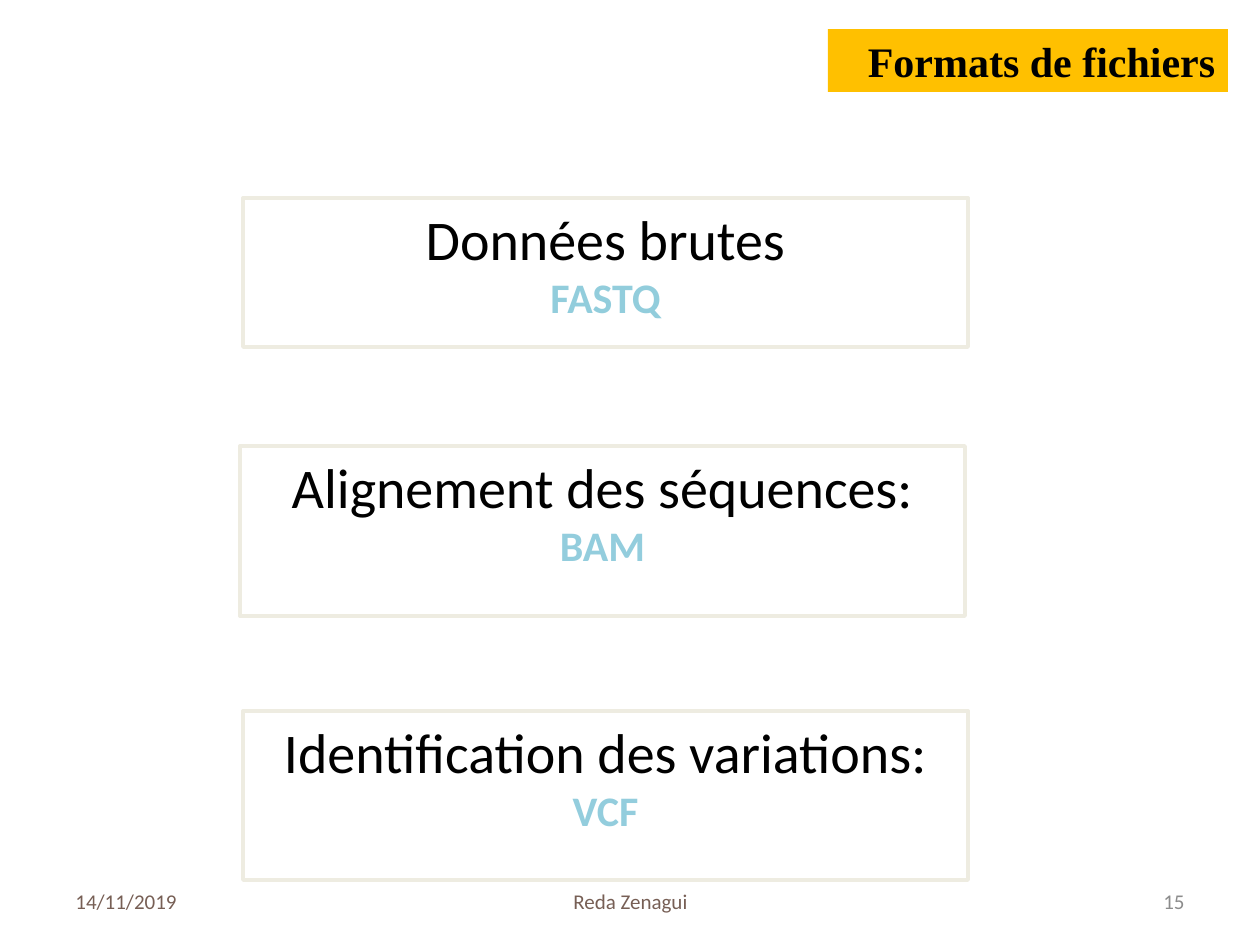
import pptx
import pptx.util
import pptx.dml.color
import pptx.enum.shapes
import pptx.enum.text

PX = 914400 / 126
BLACK = pptx.dml.color.RGBColor(0x00, 0x00, 0x00)
AMBER = pptx.dml.color.RGBColor(0xFF, 0xC0, 0x00)
IVORY = pptx.dml.color.RGBColor(0xEE, 0xEC, 0xE1)
SKY = pptx.dml.color.RGBColor(0x93, 0xCD, 0xDD)
SKY_FIRST = pptx.dml.color.RGBColor(0x92, 0xCD, 0xDC)
BROWN = pptx.dml.color.RGBColor(0x77, 0x5F, 0x55)
GREY = pptx.dml.color.RGBColor(0x8C, 0x8C, 0x8C)
ALIGN = pptx.enum.text.PP_ALIGN
ANCHOR = pptx.enum.text.MSO_ANCHOR


def emu(*lengths):
    return [pptx.util.Emu(round(length * PX)) for length in lengths]


def style(font, size, color, bold=False, name="Calibri"):
    font.name = name
    font.size = pptx.util.Pt(size)
    font.bold = bold
    font.color.rgb = color


def place_heading(slide, box, text):
    heading = slide.shapes.title
    heading.left, heading.top, heading.width, heading.height = emu(*box)
    heading.fill.solid()
    heading.fill.fore_color.rgb = AMBER
    frame = heading.text_frame
    frame.text = text
    frame.word_wrap = True
    frame.auto_size = pptx.enum.text.MSO_AUTO_SIZE.NONE
    frame.vertical_anchor = ANCHOR.TOP
    line = frame.paragraphs[0]
    line.alignment = ALIGN.RIGHT
    style(line.font, 24, BLACK, True, "Times New Roman")


def place_step(slide, box, label, file_format, format_color, separate):
    step = slide.shapes.add_shape(
        pptx.enum.shapes.MSO_SHAPE.RECTANGLE, *emu(*box))
    step.shadow.inherit = False
    step.fill.background()
    step.line.color.rgb = IVORY
    step.line.width = pptx.util.Pt(2.25)
    frame = step.text_frame
    frame.word_wrap = True
    frame.vertical_anchor = ANCHOR.TOP
    label_line = frame.paragraphs[0]
    format_line = frame.add_paragraph() if separate else label_line
    for line, text, size, color, bold in (
            (label_line, label, 32, BLACK, False),
            (format_line, file_format, 24, format_color, True)):
        line.alignment = ALIGN.CENTER
        run = line.add_run()
        run.text = text
        style(run.font, size, color, bold)


def place_footer(slide, box, entries):
    left, top, width, height = box
    for offset, entry_width, text, alignment, color in entries:
        entry = slide.shapes.add_textbox(
            *emu(left + offset, top, entry_width, height))
        frame = entry.text_frame
        frame.word_wrap = True
        frame.vertical_anchor = ANCHOR.MIDDLE
        line = frame.paragraphs[0]
        line.text = text
        line.alignment = alignment
        style(line.font, 12, color)


def main():
    deck = pptx.Presentation()
    deck.slide_width, deck.slide_height = emu(1260, 945)
    slide = deck.slides.add_slide(deck.slide_layouts[5])
    place_heading(slide, (828, 29, 400, 63), "Formats de fichiers")
    steps = (
        ((243, 198, 725, 149), "Données brutes", "FASTQ", SKY_FIRST, True),
        ((240, 446, 725, 170), "Alignement des séquences: ", "BAM", SKY, False),
        ((243, 711, 725, 169), "Identification des variations: ", "VCF", SKY, False),
    )
    for step in steps:
        place_step(slide, *step)
    place_footer(slide, (63, 876, 1134, 50), (
        (0, 294, "14/11/2019", ALIGN.LEFT, BROWN),
        (368, 399, "Reda Zenagui", ALIGN.CENTER, BROWN),
        (840, 294, "15", ALIGN.RIGHT, GREY),
    ))
    deck.save("out.pptx")


if __name__ == "__main__":
    main()
